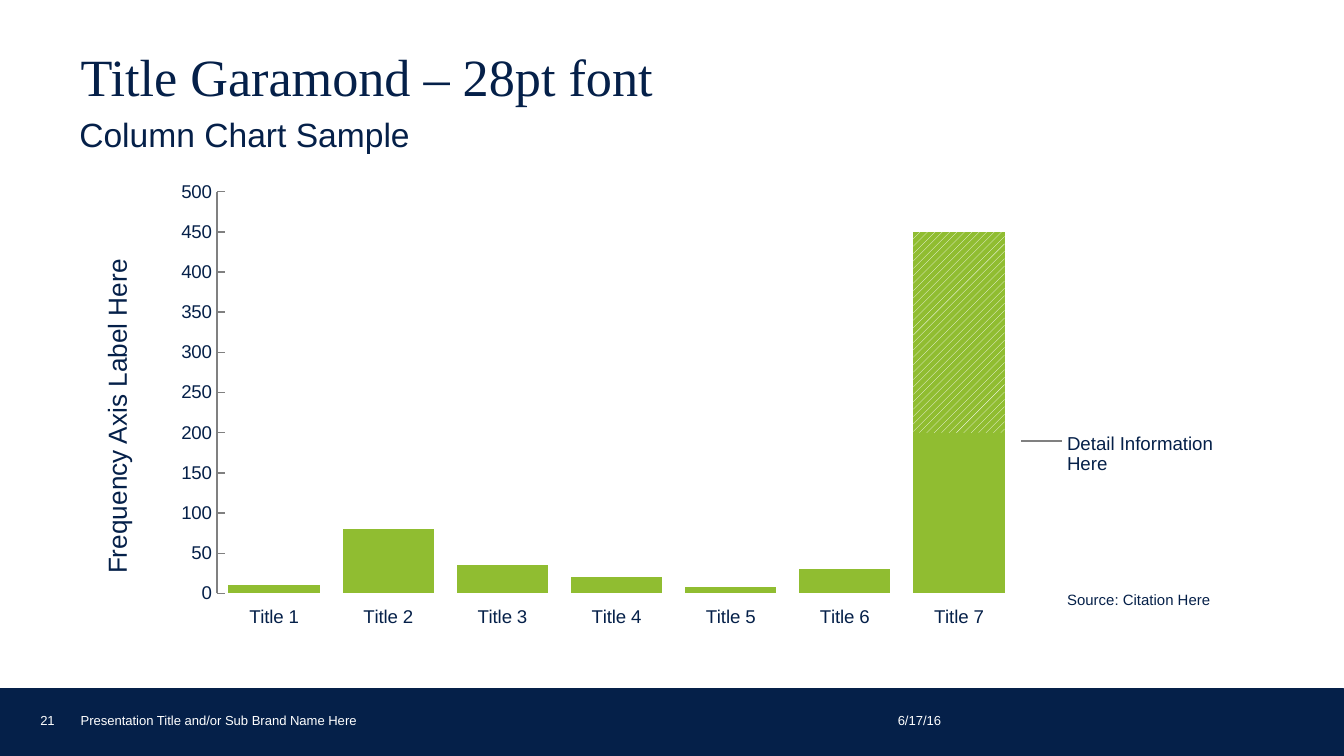
from dataclasses import dataclass

from lxml import etree
from pptx import Presentation
from pptx.chart.data import CategoryChartData
from pptx.dml.color import RGBColor
from pptx.enum.chart import XL_CHART_TYPE, XL_TICK_MARK
from pptx.enum.dml import MSO_PATTERN
from pptx.enum.shapes import MSO_CONNECTOR, MSO_SHAPE
from pptx.enum.text import MSO_ANCHOR, PP_ALIGN
from pptx.oxml.ns import qn
from pptx.util import Inches, Pt

STACKED = XL_CHART_TYPE.COLUMN_STACKED
TICK_IN, TICK_OUT, TICK_NONE = XL_TICK_MARK.INSIDE, XL_TICK_MARK.OUTSIDE, XL_TICK_MARK.NONE
DIAGONAL = MSO_PATTERN.WIDE_UPWARD_DIAGONAL
STRAIGHT = MSO_CONNECTOR.STRAIGHT
RECTANGLE = MSO_SHAPE.RECTANGLE
TOP, BOTTOM = MSO_ANCHOR.TOP, MSO_ANCHOR.BOTTOM
LEFT, CENTER = PP_ALIGN.LEFT, PP_ALIGN.CENTER

COLUMNS = 100
ROWS = COLUMNS * 9 / 16
CELL = Inches(0.1)
CHART_WIDTH, CHART_HEIGHT = 71.9, 33.3
NOTE_COLUMN, NOTE_WIDTH = 79.4, 16.6


@dataclass(frozen=True)
class Theme:
    """Colours, fonts and type sizes of the deck."""
    navy: RGBColor = RGBColor.from_string("052049")
    green: RGBColor = RGBColor.from_string("90BD31")
    blue: RGBColor = RGBColor.from_string("178CCB")
    grey: RGBColor = RGBColor.from_string("808080")
    white: RGBColor = RGBColor.from_string("FFFFFF")
    serif: str = "Times New Roman"
    sans: str = "Arial"
    title: int = 28
    subtitle: int = 18
    axis_label: int = 14
    detail: int = 10
    source: int = 8
    footer: int = 7


THEME = Theme()


def grid(*cells):
    """Turn grid cells into slide lengths."""
    return [round(cell * CELL) for cell in cells]


def style_font(font, size, color=THEME.navy, name=THEME.sans):
    """Set the size, colour and typeface of a font."""
    font.size, font.name = Pt(size), name
    font.color.rgb = color


def write(frame, lines, size, color=THEME.navy, name=THEME.sans, spacing=0.9, align=LEFT):
    """Write lines into one paragraph, a run for each line."""
    para = frame.paragraphs[0]
    para.alignment, para.line_spacing, para.space_before = align, spacing, Pt(0)
    for number, line in enumerate(lines):
        if number:
            para.add_line_break()
        span = para.add_run()
        span.text = line
        style_font(span.font, size, color, name)
    return para


def fill_placeholder(box, cells, text, size, name, spacing):
    """Move a placeholder onto the grid and write its text without a bullet."""
    box.left, box.top, box.width, box.height = grid(*cells)
    frame = box.text_frame
    frame.vertical_anchor = TOP
    para = write(frame, [text], size, name=name, spacing=spacing)
    properties = para._p.get_or_add_pPr()
    properties.set("marL", "0")
    properties.set("indent", "0")
    etree.SubElement(properties, qn("a:buNone"))


def add_label(slide, cells, lines, size, anchor=TOP, rotation=0, **style):
    """Add a text box without margins."""
    box = slide.shapes.add_textbox(*grid(*cells))
    box.rotation = rotation
    frame = box.text_frame
    frame.word_wrap, frame.vertical_anchor = True, anchor
    frame.margin_left = frame.margin_top = frame.margin_right = frame.margin_bottom = 0
    write(frame, lines, size, **style)


def add_footer(slide):
    """Add the footer band with page number, deck name and date."""
    band = slide.shapes.add_shape(RECTANGLE, *grid(0, 51.3, COLUMNS, ROWS - 51.3))
    band.shadow.inherit = False
    band.fill.solid()
    band.fill.fore_color.rgb = band.line.color.rgb = THEME.navy
    band.line.width = Pt(1.5)
    entries = [(3, 2.7, "21"),
               (6, 47.1, "Presentation Title and/or Sub Brand Name Here"),
               (66.8, 10.1, "6/17/16")]
    for column, width, text in entries:
        add_label(slide, (column, 52.9, width, 1.3), [text], THEME.footer,
                  anchor=BOTTOM, color=THEME.white, spacing=1)


def set_plot_layout(chart, left, top, width, height):
    """Fix the inner plot area, given in grid cells inside the chart."""
    area = chart._chartSpace.chart.plotArea
    for old in area.findall(qn("c:layout")):
        area.remove(old)
    layout = etree.Element(qn("c:layout"))
    area.insert(0, layout)
    manual = etree.SubElement(layout, qn("c:manualLayout"))
    settings = [("layoutTarget", "inner"), ("xMode", "edge"), ("yMode", "edge"),
                ("x", left / CHART_WIDTH), ("y", top / CHART_HEIGHT),
                ("w", width / CHART_WIDTH), ("h", height / CHART_HEIGHT)]
    for tag, value in settings:
        etree.SubElement(manual, qn(f"c:{tag}")).set("val", str(value))


def style_axes(chart):
    """Format the category axis and the frequency axis."""
    category, value = chart.category_axis, chart.value_axis
    for axis, tick in ((category, TICK_OUT), (value, TICK_IN)):
        axis.has_major_gridlines = False
        axis.major_tick_mark, axis.minor_tick_mark = tick, TICK_NONE
        style_font(axis.tick_labels.font, THEME.detail)
    category.format.line.fill.background()
    value.format.line.color.rgb = THEME.grey
    value.format.line.width = Pt(0.75)
    value.minimum_scale, value.maximum_scale, value.major_unit = 0, 500, 50


def add_column_chart(slide):
    """Add the stacked column chart with a hatched top on the last column."""
    data = CategoryChartData()
    data.categories = [f"Title {number}" for number in range(1, 8)]
    data.add_series("Series 1", [10, 80, 35, 20, 8, 30, 200])
    data.add_series("Series 2", [None] * 6 + [250])
    cells = grid(11.2, 13.4, CHART_WIDTH, CHART_HEIGHT)
    chart = slide.shapes.add_chart(STACKED, *cells, data).chart
    chart.has_legend = chart.has_title = False
    style_font(chart.font, THEME.subtitle, name=THEME.serif)
    plot = chart.plots[0]
    plot.gap_width, plot.overlap, plot.vary_by_categories = 25, 100, False
    for series, color in zip(plot.series, (THEME.green, THEME.blue)):
        series.format.fill.solid()
        series.format.fill.fore_color.rgb = color
    hatch = plot.series[1].points[6].format.fill
    hatch.patterned()
    hatch.pattern = DIAGONAL
    hatch.fore_color.rgb, hatch.back_color.rgb = THEME.white, THEME.green
    style_axes(chart)
    set_plot_layout(chart, 4.95, 0.87, 59.45, 30.05)


def add_leader(slide, start, end, row):
    """Add a thin level line that leads to a note."""
    leader = slide.shapes.add_connector(STRAIGHT, *grid(start, row, end, row))
    leader.line.color.rgb, leader.line.width = THEME.grey, Pt(1)
    etree.SubElement(leader._element.spPr, qn("a:effectLst"))


def main():
    """Build the column chart slide and save the deck."""
    deck = Presentation()
    deck.slide_width, deck.slide_height = grid(COLUMNS, ROWS)
    slide = deck.slides.add_slide(deck.slide_layouts[1])
    add_footer(slide)
    title, subtitle = slide.placeholders
    fill_placeholder(title, (5, 3.5, 88.4, 6.2), "Title Garamond – 28pt font",
                     THEME.title, THEME.serif, 0.85)
    fill_placeholder(subtitle, (4.9, 8.3, 88.3, 3.1), "Column Chart Sample",
                     THEME.subtitle, THEME.sans, 0.9)
    add_column_chart(slide)
    add_label(slide, (-4.8, 29.9, 27.3, 2.2), ["Frequency Axis Label Here"],
              THEME.axis_label, rotation=270, align=CENTER)
    add_leader(slide, 76, 79, 32.8)
    add_label(slide, (NOTE_COLUMN, 44.1, NOTE_WIDTH, 1.2), ["Source: Citation Here"],
              THEME.source)
    add_label(slide, (NOTE_COLUMN, 32.3, NOTE_WIDTH, 3), ["Detail Information", "Here"],
              THEME.detail)
    deck.save("out.pptx")


if __name__ == "__main__":
    main()
